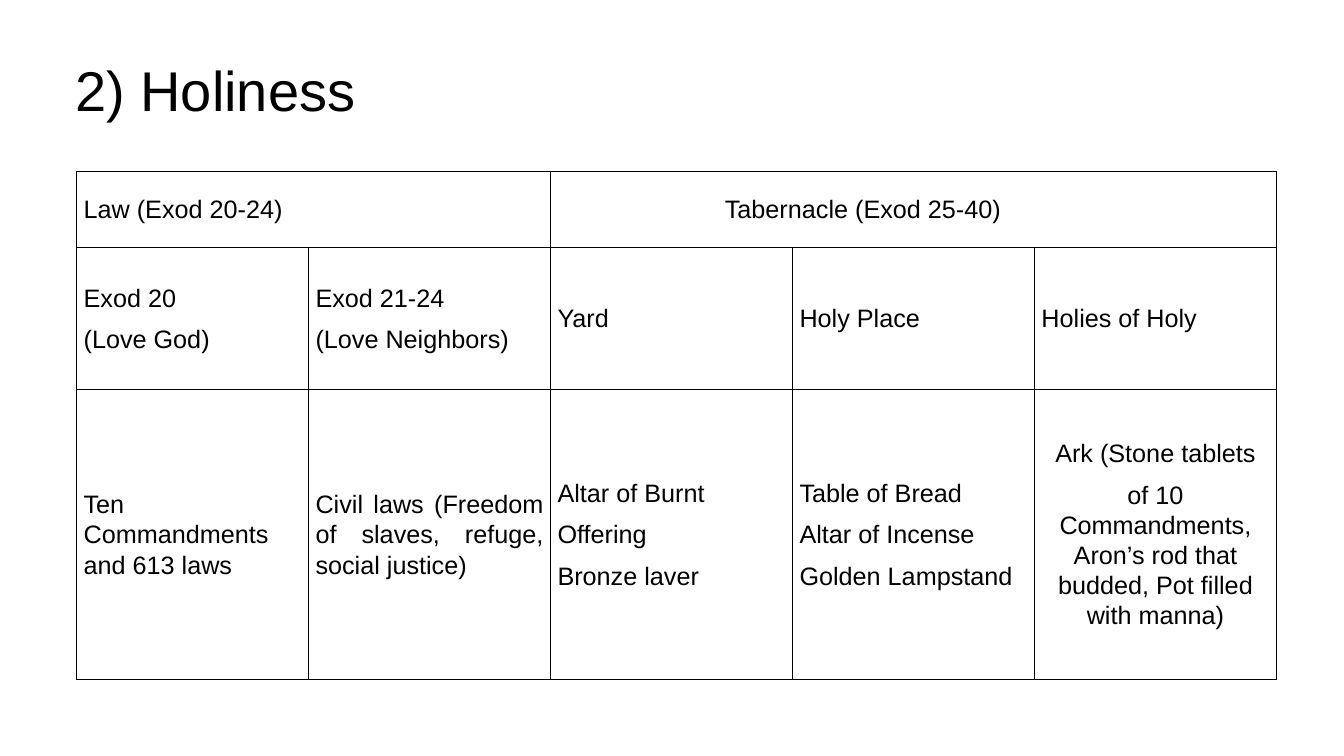
"""Build the Holiness slide with its table of law and tabernacle."""
from dataclasses import dataclass

import lxml.etree
import pptx
import pptx.dml.color
import pptx.enum.text
import pptx.oxml.ns
import pptx.util

Inches = pptx.util.Inches
Pt = pptx.util.Pt
ALIGN = pptx.enum.text.PP_ALIGN
MIDDLE = pptx.enum.text.MSO_ANCHOR.MIDDLE
COLORS = {"ink": "000000", "paper": "FFFFFF"}
WIDTHS = (2.3, 2.4, 2.4, 2.4, 2.4)
HEIGHTS = (0.75, 1.41, 2.88)
CELL = {
    "vertical_anchor": MIDDLE,
    "margin_left": Inches(0.07),
    "margin_right": Inches(0.07),
    "margin_top": Inches(0.02),
    "margin_bottom": Inches(0.02),
}
BODY = {"line_spacing": 1.07, "space_after": Pt(8)}


@dataclass(frozen=True)
class Entry:
    row: int
    col: int
    lines: tuple[str, ...]
    span: int = 1
    align: ALIGN = ALIGN.JUSTIFY
    indent: float = 0


ENTRIES = (
    Entry(0, 0, ("Law (Exod 20-24)",), span=2),
    Entry(0, 2, ("Tabernacle (Exod 25-40)",), span=3, indent=1.66),
    Entry(1, 0, ("Exod 20", "(Love God)")),
    Entry(1, 1, ("Exod 21-24", "(Love Neighbors)")),
    Entry(1, 2, ("Yard",)),
    Entry(1, 3, ("Holy Place",)),
    Entry(1, 4, ("Holies of Holy",)),
    Entry(2, 0, ("Ten Commandments and 613 laws",)),
    Entry(2, 1, ("Civil laws (Freedom of slaves, refuge, social justice)",)),
    Entry(2, 2, ("Altar of Burnt", "Offering", "Bronze laver")),
    Entry(2, 3, ("Table of Bread", "Altar of Incense", "Golden Lampstand")),
    Entry(2, 4, ("Ark (Stone tablets", "of 10 Commandments, Aron’s rod that budded, "
                 "Pot filled with manna)"), align=ALIGN.CENTER),
)


def apply(target: object, format: dict) -> None:
    for name, value in format.items():
        setattr(target, name, value)


def write(frame, lines: tuple[str, ...], size: int, format: dict, indent: float = 0) -> None:
    frame.text = "\n".join(lines)
    for para in frame.paragraphs:
        apply(para, format)
        if indent:
            para._p.get_or_add_pPr().set("marL", str(Inches(indent)))
        for run in para.runs:
            apply(run.font, {"name": "Arial", "size": Pt(size), "bold": False})
            run.font.color.rgb = pptx.dml.color.RGBColor.from_string(COLORS["ink"])


def border(cell) -> None:
    qn = pptx.oxml.ns.qn
    props = cell._tc.get_or_add_tcPr()
    for side in "LRTB":
        line = lxml.etree.SubElement(props, qn(f"a:ln{side}"), w=str(Pt(0.28)))
        fill = lxml.etree.SubElement(line, qn("a:solidFill"))
        lxml.etree.SubElement(fill, qn("a:srgbClr"), val=COLORS["ink"])


def add_title(slide) -> None:
    box = slide.shapes.add_textbox(Inches(0.6), Inches(0.3), Inches(3.07), Inches(1.25))
    apply(box.text_frame, {"word_wrap": True, "vertical_anchor": MIDDLE})
    write(box.text_frame, ("2) Holiness",), 40, {"alignment": ALIGN.CENTER, "line_spacing": 0.9})


def add_grid(slide) -> None:
    table = slide.shapes.add_table(
        len(HEIGHTS), len(WIDTHS), Inches(0.76), Inches(1.7),
        Inches(sum(WIDTHS)), Inches(sum(HEIGHTS)),
    ).table
    apply(table, {"first_row": False, "horz_banding": False})
    for column, width in zip(table.columns, WIDTHS):
        column.width = Inches(width)
    for row, height in zip(table.rows, HEIGHTS):
        row.height = Inches(height)
    for cell in table.iter_cells():
        border(cell)
        cell.fill.solid()
        cell.fill.fore_color.rgb = pptx.dml.color.RGBColor.from_string(COLORS["paper"])
        apply(cell, CELL)
    for entry in ENTRIES:
        cell = table.cell(entry.row, entry.col)
        if entry.span > 1:
            cell.merge(table.cell(entry.row, entry.col + entry.span - 1))
        write(cell.text_frame, entry.lines, 18, BODY | {"alignment": entry.align}, entry.indent)


def main() -> None:
    deck = pptx.Presentation()
    apply(deck, {"slide_width": Inches(13.33), "slide_height": Inches(7.5)})
    slide = deck.slides.add_slide(deck.slide_layouts[6])
    add_title(slide)
    add_grid(slide)
    deck.save("out.pptx")


if __name__ == "__main__":
    main()
